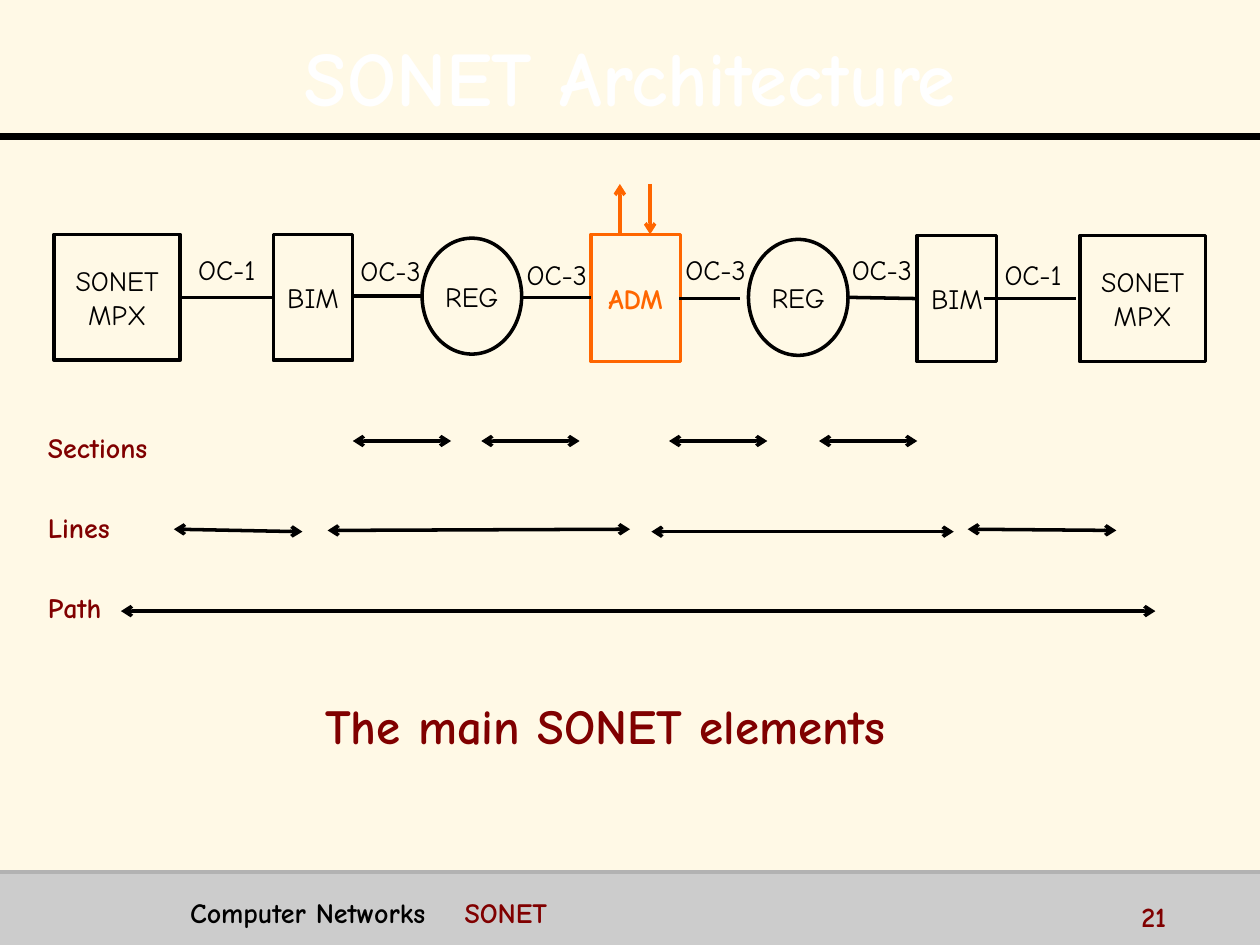
"""Build the SONET Architecture slide."""
from dataclasses import dataclass

from lxml import etree
from pptx import Presentation
from pptx import util as u
from pptx.dml.color import RGBColor
from pptx.enum import shapes, text
from pptx.oxml import ns


@dataclass(frozen=True)
class Theme:
    """Colours, font and type sizes of the slide."""
    font: str = "Comic Neue"
    paper: str = "FFF9E6"
    ink: str = "000000"
    white: str = "FFFFFF"
    maroon: str = "800000"
    orange: str = "FF6600"
    bar: str = "CCCCCC"
    bar_edge: str = "B2B2B2"
    title: int = 44
    caption: int = 28
    body: int = 16


T = Theme()
RECT, OVAL = shapes.MSO_SHAPE.RECTANGLE, shapes.MSO_SHAPE.OVAL
CENTER, LEFT = text.PP_ALIGN.CENTER, text.PP_ALIGN.LEFT
MIDDLE, TOP = text.MSO_ANCHOR.MIDDLE, text.MSO_ANCHOR.TOP


def rgb(value):
    """Return a colour object for a hex string."""
    return RGBColor.from_string(value)


def child(parent, tag, **attrs):
    """Append a drawing element with the given attributes."""
    return etree.SubElement(parent, ns.qn(tag), **attrs)


def add_run(p, words, color=T.ink, size=T.body, bold=False):
    """Add one formatted run to a paragraph."""
    r = p.add_run()
    r.text = words
    r.font.name, r.font.size, r.font.bold = T.font, u.Pt(size), bold
    r.font.color.rgb = rgb(color)
    return r


def write(tf, lines, align=CENTER, anchor=MIDDLE, wrap=False, **style):
    """Write one paragraph per line into a text frame."""
    tf.word_wrap, tf.vertical_anchor = wrap, anchor
    tf.auto_size = text.MSO_AUTO_SIZE.NONE
    for i, words in enumerate(lines):
        p = tf.paragraphs[0] if i == 0 else tf.add_paragraph()
        p.alignment = align
        add_run(p, words, **style)


def place(sp, x, y, w, h):
    """Move and size a shape in inches."""
    sp.left, sp.top, sp.width, sp.height = map(u.Inches, (x, y, w, h))


def add_title(s, words):
    """Fill the title placeholder with shadowed text."""
    sp = s.shapes.title
    place(sp, 0.2, 0.13, 9.61, 0.87)
    write(sp.text_frame, [words], wrap=True, color=T.white, size=T.title, bold=True)
    p = sp.text_frame.paragraphs[0]
    p.line_spacing = 1.1
    effects = etree.Element(ns.qn("a:effectLst"))
    shadow = child(effects, "a:outerShdw", dist="35921", dir="2700000")
    child(shadow, "a:srgbClr", val=T.ink)
    p.runs[0].font.fill._xPr.find(ns.qn("a:solidFill")).addnext(effects)


def add_row_names(s, names):
    """Fill the body placeholder with evenly spaced row names."""
    sp = s.placeholders[1]
    place(sp, 0.28, 3.37, 1.11, 1.81)
    write(sp.text_frame, names, LEFT, TOP, True, color=T.maroon, bold=True)
    for i, p in enumerate(sp.text_frame.paragraphs):
        p.space_before = u.Pt(26.5 if i else 0)
        pPr = p._p.get_or_add_pPr()
        pPr.set("marL", "0")
        pPr.set("indent", "0")
        child(pPr, "a:buNone")


def add_text(s, box, lines, *args, **style):
    """Add a text box."""
    sp = s.shapes.add_textbox(*map(u.Inches, box))
    write(sp.text_frame, lines, *args, **style)


def add_node(s, kind, box, lines, color=T.ink, bold=False):
    """Add an outlined network element with its name."""
    sp = s.shapes.add_shape(kind, *map(u.Inches, box))
    sp.shadow.inherit = False
    sp.fill.background()
    sp.line.color.rgb, sp.line.width = rgb(color), u.Pt(2)
    write(sp.text_frame, lines, color=color, bold=bold)


def add_line(s, x1, y1, x2, y2, color=T.ink, width=2, ends=()):
    """Add a straight line with open arrowheads at the listed ends."""
    sp = s.shapes.add_connector(shapes.MSO_CONNECTOR.STRAIGHT,
                                *map(u.Inches, (x1, y1, x2, y2)))
    sp.line.color.rgb, sp.line.width = rgb(color), u.Pt(width)
    ln = sp.line._get_or_add_ln()
    for end in ends:
        child(ln, f"a:{end}End", type="arrow")
    child(ln.getparent(), "a:effectLst")


def add_frame(s):
    """Add the background, title rule and footer bar."""
    s.background.fill.solid()
    s.background.fill.fore_color.rgb = rgb(T.paper)
    bar = s.shapes.add_shape(RECT, *map(u.Inches, (0, 6.92, 10, 0.58)))
    bar.shadow.inherit = False
    bar.fill.solid()
    bar.fill.fore_color.rgb = rgb(T.bar)
    bar.line.fill.background()
    add_line(s, 0, 1.08, 10, 1.08, width=4)
    add_line(s, 0, 6.92, 10, 6.92, T.bar_edge)


def add_network(s):
    """Add the chain of network elements and its links."""
    for x, y in ((0.43, 1.86), (8.57, 1.87)):
        add_node(s, RECT, (x, y, 1, 1), ["SONET", "MPX"])
    for x, y in ((2.17, 1.86), (7.28, 1.87)):
        add_node(s, RECT, (x, y, 0.63, 1), ["BIM"])
    add_node(s, RECT, (4.69, 1.86, 0.71, 1.01), ["ADM"], T.orange, True)
    for x, y1, y2 in ((4.92, 1.86, 1.46), (5.16, 1.46, 1.86)):
        add_line(s, x, y1, x, y2, T.orange, ends=["tail"])
    for x, y in ((3.35, 1.89), (5.94, 1.9)):
        add_node(s, OVAL, (x, y, 0.79, 0.92), ["REG"])
    links = ((1.43, 2.36, 2.17, 2.36), (7.81, 2.37, 8.54, 2.37),
             (2.8, 2.35, 3.35, 2.35), (6.73, 2.36, 7.28, 2.37),
             (4.13, 2.36, 4.69, 2.36), (5.39, 2.37, 5.87, 2.37))
    for link in links:
        add_line(s, *link)
    rates = (("OC-1", 1.3, 1.94), ("OC-1", 7.7, 1.98), ("OC-3", 2.6, 1.95),
             ("OC-3", 3.92, 1.98), ("OC-3", 5.18, 1.94), ("OC-3", 6.5, 1.94))
    for rate, x, y in rates:
        add_text(s, (x, y, 1, 0.39), [rate])


def add_spans(s):
    """Add the double arrows for sections, lines and path."""
    sections = [(x, 3.5, x + 0.78, 3.5) for x in (2.8, 3.82, 5.31, 6.5)]
    lines = [(1.38, 4.2, 2.4, 4.22), (2.6, 4.21, 5, 4.2),
             (5.17, 4.22, 7.57, 4.22), (7.68, 4.2, 8.86, 4.21)]
    for span in sections + lines + [(0.96, 4.85, 9.17, 4.85)]:
        add_line(s, *span, ends=["head", "tail"])


def add_footer(s):
    """Add the course name, topic and page number."""
    tf = s.shapes.add_textbox(*map(u.Inches, (1.41, 7.06, 7.28, 0.31))).text_frame
    tf.word_wrap = True
    p = tf.paragraphs[0]
    tabs = child(p._p.get_or_add_pPr(), "a:tabLst")
    child(tabs, "a:tab", pos=str(u.Inches(2.18)), algn="l")
    add_run(p, "Computer Networks\t", bold=True)
    add_run(p, "SONET", T.maroon, bold=True)
    add_text(s, (8.96, 7.09, 1, 0.25), ["21"], LEFT, TOP, True,
             color=T.maroon, bold=True)


def main():
    """Build and save the slide."""
    prs = Presentation()
    prs.slide_width, prs.slide_height = u.Inches(10), u.Inches(7.5)
    s = prs.slides.add_slide(prs.slide_layouts[1])
    add_frame(s)
    add_title(s, "SONET Architecture")
    add_row_names(s, ["Sections", "Lines", "Path"])
    add_network(s)
    add_spans(s)
    add_text(s, (1.93, 5.47, 5.75, 0.57), ["The main SONET elements"], CENTER, TOP,
             True, color=T.maroon, size=T.caption, bold=True)
    add_footer(s)
    prs.save("out.pptx")


if __name__ == "__main__":
    main()
